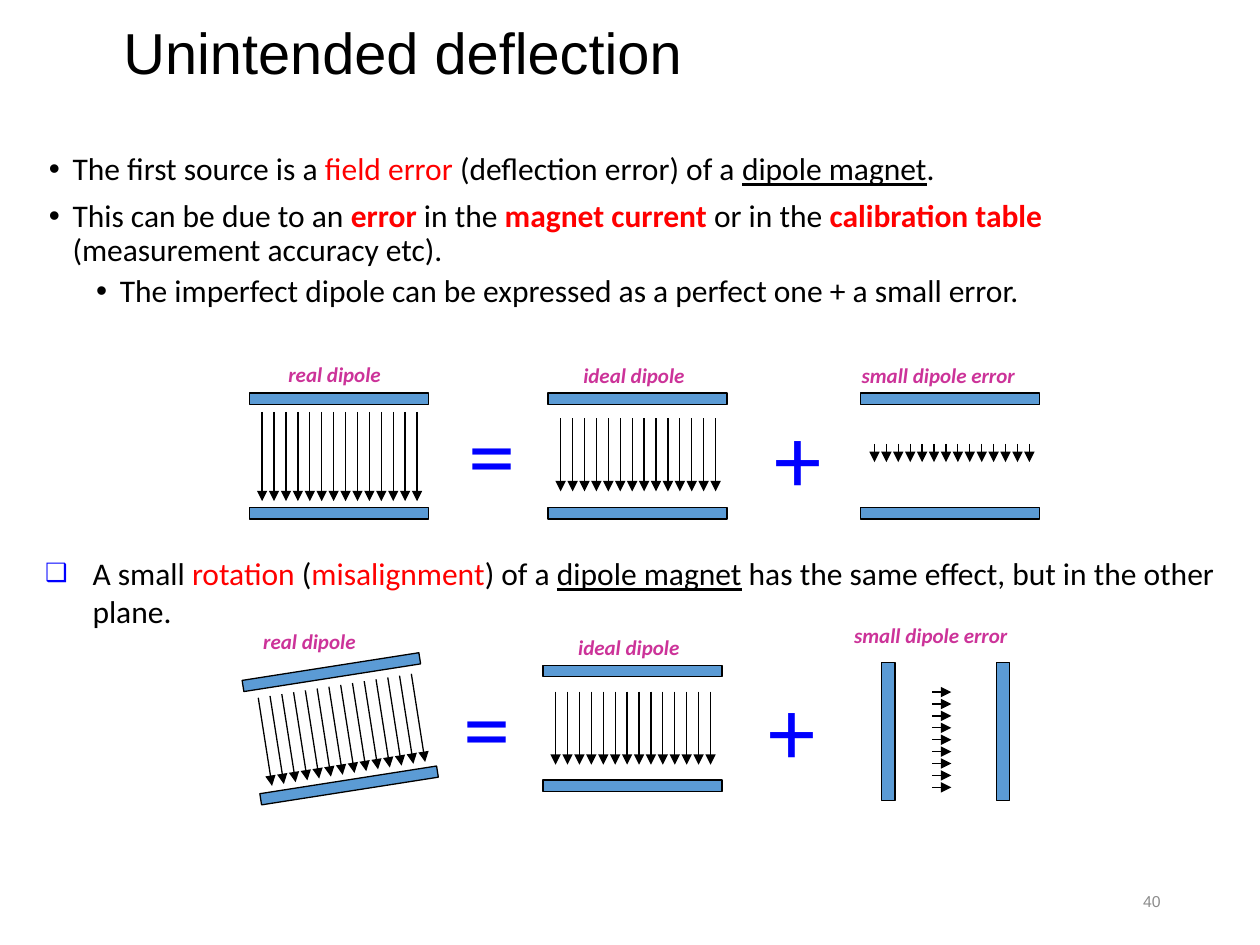
import math

import pptx
import pptx.dml.color
import pptx.enum.shapes
import pptx.enum.text
import pptx.oxml
import pptx.oxml.ns
import pptx.util

Pt = pptx.util.Pt
RGBColor = pptx.dml.color.RGBColor
ALIGN = pptx.enum.text.PP_ALIGN
ANCHOR = pptx.enum.text.MSO_ANCHOR

BLACK = RGBColor(0, 0, 0)
RED = RGBColor(255, 0, 0)
BLUE = RGBColor(0, 0, 255)
GRAY = RGBColor(0x8C, 0x8C, 0x8C)
STEEL = RGBColor(0x5B, 0x9B, 0xD5)
MAGENTA = RGBColor(0xCC, 0x33, 0x99)

COIL_WIDTH = 102.24
ARROW_PITCH = 6.81
SYMBOL_SIZE = (41.8, 72.7)


def add_text_box(shapes, left, top, width, height, wrap=True, anchor=ANCHOR.TOP):
    """Add an empty text box and return its text frame."""
    frame = shapes.add_textbox(Pt(left), Pt(top), Pt(width), Pt(height)).text_frame
    frame.word_wrap = wrap
    frame.vertical_anchor = anchor
    return frame


def add_run(paragraph, text, size, color=BLACK, name="Calibri", bold=False, italic=False, underline=False):
    """Append one formatted run to a paragraph."""
    run = paragraph.add_run()
    run.text = text
    font = run.font
    font.size, font.name = Pt(size), name
    font.bold, font.italic, font.underline = bold, italic, underline
    font.color.rgb = color


def add_xml(parent, tag, children="", **attributes):
    """Append a drawing element with the given attributes to a parent."""
    values = "".join(f' {key}="{value}"' for key, value in attributes.items())
    namespace = pptx.oxml.ns.nsdecls("a")
    parent.append(pptx.oxml.parse_xml(f"<a:{tag} {namespace}{values}>{children}</a:{tag}>"))


def set_bullet(paragraph, character, margin, hanging, color=None, percent=100):
    """Give a paragraph a hanging bullet."""
    properties = paragraph._p.get_or_add_pPr()
    properties.set("marL", str(Pt(margin)))
    properties.set("indent", str(-Pt(hanging)))
    if color is not None:
        add_xml(properties, "buClr", f'<a:srgbClr val="{color}"/>')
    add_xml(properties, "buSzPct", val=percent * 1000)
    add_xml(properties, "buFont", typeface="Arial")
    add_xml(properties, "buChar", char=character)


def add_title(slide, left, top, width, height):
    """Place the slide title."""
    frame = add_text_box(slide.shapes, left, top, width, height, anchor=ANCHOR.MIDDLE)
    frame.paragraphs[0].line_spacing = 0.9
    add_run(frame.paragraphs[0], "Unintended deflection", 33, name="Arial")


def add_page_number(slide, left, top, width, height):
    """Place the page number."""
    frame = add_text_box(slide.shapes, left, top, width, height, anchor=ANCHOR.MIDDLE)
    frame.paragraphs[0].alignment = ALIGN.RIGHT
    add_run(frame.paragraphs[0], "40", 9, GRAY, "Arial")


def add_field_error_bullets(slide, left, top, width, height):
    """Place the bullets on the field error."""
    strong = {"color": RED, "bold": True}
    bullets = [
        (0, 0, [("The first source is a ", {}), ("field error ", {"color": RED}),
                ("(deflection error) of a ", {}), ("dipole magnet", {"underline": True}), (".", {})]),
        (0, 7.5, [("This can be due to an ", {}), ("error", strong), (" in the ", {}),
                  ("magnet current ", strong), ("or in the ", {}),
                  ("calibration table ", strong), ("(measurement accuracy etc).", {})]),
        (1, 3.8, [("The imperfect dipole can be expressed as a perfect one + a small error.", {})]),
    ]
    frame = add_text_box(slide.shapes, left, top, width, height)
    for index, (level, space, runs) in enumerate(bullets):
        paragraph = frame.add_paragraph() if index else frame.paragraphs[0]
        paragraph.level = level
        set_bullet(paragraph, "•", 13.5 + 27 * level, 13.5)
        paragraph.line_spacing = 0.9
        paragraph.space_before = Pt(space)
        for text, style in runs:
            add_run(paragraph, text, 18, **style)


def add_rotation_bullet(shapes, left, top, width, height):
    """Place the bullet on the rotated magnet."""
    frame = add_text_box(shapes, left, top, width, height)
    frame.margin_left = frame.margin_right = Pt(5)
    frame.margin_top = frame.margin_bottom = Pt(2.9)
    paragraph = frame.paragraphs[0]
    set_bullet(paragraph, "❑", 27, 27, BLUE, 80)
    for text, style in [("A small ", {}), ("rotation", {"color": RED}), (" (", {}),
                        ("misalignment", {"color": RED}), (") of a ", {}),
                        ("dipole magnet", {"underline": True}),
                        (" has the same effect, but in the other plane.", {})]:
        add_run(paragraph, text, 18, **style)


def add_field_arrow(shapes, start, end):
    """Draw one field line with an arrowhead at its end."""
    points = [Pt(value) for value in (*start, *end)]
    connector = shapes.add_connector(pptx.enum.shapes.MSO_CONNECTOR.STRAIGHT, *points)
    connector.line.color.rgb = BLACK
    connector.line.width = Pt(0.75)
    add_xml(connector.line._get_or_add_ln(), "tailEnd", type="triangle")
    add_xml(connector._element.spPr, "effectLst")


def add_dipole(shapes, left, top, width, height, offset, length, first=7.2, count=14, angle=0, thickness=6.48):
    """Draw two coils and the field between them, turned about the box centre."""
    center_x, center_y = left + width / 2, top + height / 2
    cosine, sine = math.cos(math.radians(angle)), math.sin(math.radians(angle))

    def turn(x, y):
        """Turn a point given from the box corner."""
        x, y = x - width / 2, y - height / 2
        return center_x + x * cosine - y * sine, center_y + x * sine + y * cosine

    for middle in (thickness / 2, height - thickness / 2):
        x, y = turn(width / 2, middle)
        coil = shapes.add_shape(pptx.enum.shapes.MSO_SHAPE.RECTANGLE, Pt(x - width / 2),
                                Pt(y - thickness / 2), Pt(width), Pt(thickness))
        coil.rotation = angle
        coil.shadow.inherit = False
        coil.fill.solid()
        coil.fill.fore_color.rgb = STEEL
        coil.line.color.rgb = BLACK
        coil.line.width = Pt(0.75)
    for index in range(count):
        x = first + index * ARROW_PITCH
        add_field_arrow(shapes, turn(x, offset), turn(x, offset + length))


def add_captions(shapes, symbols, labels):
    """Place the operators and the names of the dipoles."""
    for text, (left, top) in zip("=+", symbols):
        frame = add_text_box(shapes, left, top, *SYMBOL_SIZE, wrap=False)
        add_run(frame.paragraphs[0], text, 54, BLUE)
    names = [("real dipole", 68.4), ("ideal dipole", 73.4), ("small dipole error", 103.7)]
    for (text, width), (left, top) in zip(names, labels):
        frame = add_text_box(shapes, left, top, width, 21.6, wrap=False)
        add_run(frame.paragraphs[0], text, 12, MAGENTA, bold=True, italic=True)


def add_field_error_row(slide, left, top):
    """Draw the dipole with a field error as a sum of two dipoles."""
    shapes = slide.shapes.add_group_shape().shapes
    add_dipole(shapes, left, top, COIL_WIDTH, 72, 10.8, 51)
    add_dipole(shapes, left + 170.6, top, COIL_WIDTH, 72, 14.4, 41.8)
    add_dipole(shapes, left + 349.2, top, COIL_WIDTH, 72, 29, 10.5, first=7.9)
    add_captions(shapes, [(left + 118, top - 2.2), (left + 293, top)],
                 [(left + 15.1, top - 21.6), (left + 183.6, top - 20.9), (left + 342.7, top - 20.9)])


def add_rotation_row(slide, left, top):
    """Draw the rotated dipole as a sum of two dipoles."""
    shapes = slide.shapes.add_group_shape().shapes
    add_rotation_bullet(shapes, left, top, 686.2, 40.3)
    add_dipole(shapes, left + 122.4, top + 66.6, COIL_WIDTH, 72, 11.2, 51, first=7.6, angle=-8.9)
    add_dipole(shapes, left + 289.4, top + 66.3, COIL_WIDTH, 72, 15, 41.8)
    add_dipole(shapes, left + 479.9, top + 67.5, 79.2, 73.1, 29, 10.8, first=7.6,
               count=9, angle=-90, thickness=7.56)
    add_captions(shapes, [(left + 236.9, top + 64.1), (left + 411.1, top + 66.2)],
                 [(left + 122.4, top + 41.8), (left + 302.4, top + 45.4), (left + 460.1, top + 38.2)])


def main():
    """Build and save the slide."""
    presentation = pptx.Presentation()
    presentation.slide_width, presentation.slide_height = Pt(720), Pt(540)
    slide = presentation.slides.add_slide(presentation.slide_layouts[6])
    add_title(slide, 63.4, 0, 584.6, 63.4)
    add_page_number(slide, 508.3, 500.4, 162, 28.8)
    add_field_error_bullets(slide, 20.9, 84.2, 686.2, 102.2)
    add_field_error_row(slide, 142.6, 224.6)
    add_rotation_row(slide, 20.9, 313.9)
    presentation.save("out.pptx")


if __name__ == "__main__":
    main()
